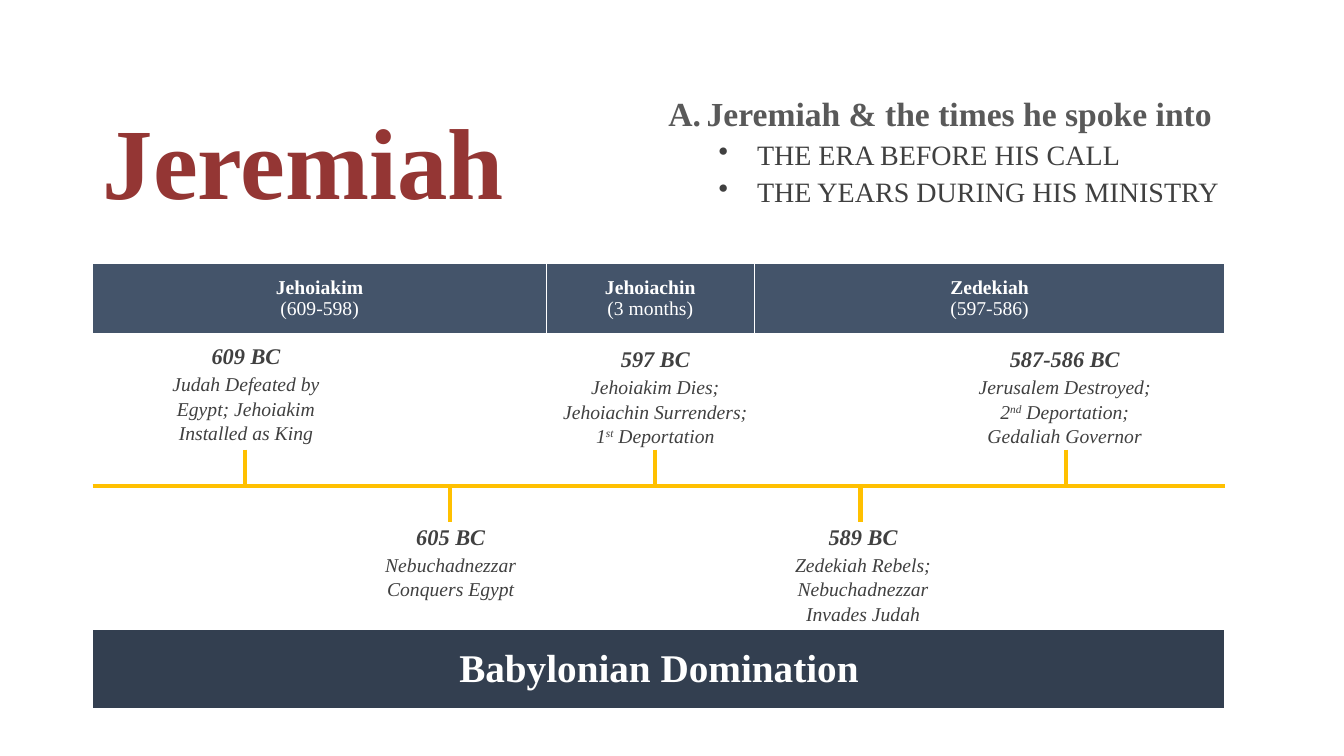
from lxml.etree import SubElement
from pptx import Presentation
from pptx.dml.color import RGBColor
from pptx.enum.shapes import MSO_CONNECTOR
from pptx.enum.text import MSO_ANCHOR, MSO_AUTO_SIZE, PP_ALIGN
from pptx.oxml.ns import qn
from pptx.util import Inches, Pt

FONT = "Times New Roman"
MAROON = RGBColor(0x94, 0x36, 0x34)
GREY = RGBColor(0x59, 0x59, 0x59)
DARK_GREY = RGBColor(0x40, 0x40, 0x40)
GOLD = RGBColor(0xFF, 0xC0, 0x00)
SLATE = RGBColor(0x44, 0x54, 0x6A)
NAVY = RGBColor(0x33, 0x3F, 0x50)
WHITE = RGBColor(0xFF, 0xFF, 0xFF)

LEFT, WIDTH = 0.92, 11.23
STEM = 0.36
LABEL_WIDTH, LABEL_HEIGHT = 2.04, 1.09

POINTS = ["THE ERA BEFORE HIS CALL", "THE YEARS DURING HIS MINISTRY"]
KINGS = [
    ("Jehoiakim", "(609-598)", 4.5),
    ("Jehoiachin", "(3 months)", 2.06),
    ("Zedekiah", "(597-586)", 4.67),
]
# Label left, label top, date, and description split as (before, superscript, after)
EVENTS = [
    (1.42, 3.38, "609 BC",
     ("Judah Defeated by Egypt; Jehoiakim Installed as King", "", "")),
    (3.45, 5.17, "605 BC", ("Nebuchadnezzar Conquers Egypt", "", "")),
    (5.48, 3.41, "597 BC",
     ("Jehoiakim Dies; Jehoiachin Surrenders; 1", "st", " Deportation")),
    (7.54, 5.17, "589 BC",
     ("Zedekiah Rebels; Nebuchadnezzar Invades Judah", "", "")),
    (9.54, 3.41, "587-586 BC",
     ("Jerusalem Destroyed; 2", "nd", " Deportation; Gedaliah Governor")),
]


def add_run(paragraph, text, size, color, bold=False, italic=False):
    run = paragraph.add_run()
    run.text = text
    font = run.font
    font.name, font.size, font.bold, font.italic = FONT, Pt(size), bold, italic
    font.color.rgb = color
    return run


def add_text_frame(slide, left, top, width, height):
    box = slide.shapes.add_textbox(
        Inches(left), Inches(top), Inches(width), Inches(height))
    box.text_frame.word_wrap = True
    return box.text_frame


def set_bullet(paragraph, tag, indent, **attributes):
    """Give the paragraph a hanging bullet or number."""
    properties = paragraph._p.get_or_add_pPr()
    properties.set("marL", str(Inches(indent)))
    properties.set("indent", str(Inches(-0.38)))
    SubElement(properties, qn(tag), attributes)


def add_title(slide, left, top, width, height):
    title = slide.shapes.title
    title.left, title.top = Inches(left), Inches(top)
    title.width, title.height = Inches(width), Inches(height)
    frame = title.text_frame
    frame.auto_size = MSO_AUTO_SIZE.NONE
    frame.vertical_anchor = MSO_ANCHOR.BOTTOM
    paragraph = frame.paragraphs[0]
    paragraph.alignment = PP_ALIGN.LEFT
    paragraph.line_spacing = 0.9
    add_run(paragraph, "Jeremiah", 72, MAROON, bold=True)


def add_outline(slide, left, top, width, height):
    frame = add_text_frame(slide, left, top, width, height)
    heading = frame.paragraphs[0]
    heading.line_spacing = 0.9
    heading.space_before = Pt(10)
    set_bullet(heading, "a:buAutoNum", 0.38, type="alphaUcPeriod")
    add_run(heading, "Jeremiah & the times he spoke into", 24, GREY, bold=True)
    for point in POINTS:
        paragraph = frame.add_paragraph()
        paragraph.level = 1
        paragraph.line_spacing = 0.9
        paragraph.space_before = Pt(5)
        set_bullet(paragraph, "a:buChar", 0.88, char="•")
        add_run(paragraph, point, 20, DARK_GREY)


def add_band(slide, top, height, widths, fill):
    """Add a one-row table and return its cells."""
    table = slide.shapes.add_table(
        1, len(widths), Inches(LEFT), Inches(top), Inches(WIDTH), Inches(height)).table
    for column, width in zip(table.columns, widths):
        column.width = Inches(width)
    cells = list(table.rows[0].cells)
    for cell in cells:
        cell.fill.solid()
        cell.fill.fore_color.rgb = fill
        cell.vertical_anchor = MSO_ANCHOR.MIDDLE
        cell.text_frame.paragraphs[0].alignment = PP_ALIGN.CENTER
    return cells


def add_kings(slide, top, height):
    cells = add_band(slide, top, height, [king[2] for king in KINGS], SLATE)
    for cell, (name, reign, _) in zip(cells, KINGS):
        add_run(cell.text_frame.paragraphs[0], name, 14, WHITE, bold=True)
        paragraph = cell.text_frame.add_paragraph()
        paragraph.alignment = PP_ALIGN.CENTER
        add_run(paragraph, reign, 14, WHITE)


def add_domination(slide, top, height):
    cell = add_band(slide, top, height, [WIDTH], NAVY)[0]
    add_run(cell.text_frame.paragraphs[0], "Babylonian Domination", 28, WHITE, bold=True)


def add_line(slide, x1, y1, x2, y2):
    line = slide.shapes.add_connector(
        MSO_CONNECTOR.STRAIGHT, Inches(x1), Inches(y1), Inches(x2), Inches(y2))
    line.line.color.rgb = GOLD
    line.line.width = Pt(3)
    SubElement(line._element.spPr, qn("a:effectLst"))


def add_event_label(slide, left, top, date, description):
    frame = add_text_frame(slide, left, top, LABEL_WIDTH, LABEL_HEIGHT)
    heading = frame.paragraphs[0]
    heading.alignment = PP_ALIGN.CENTER
    heading.line_spacing = 0.9
    heading.space_before = Pt(10)
    add_run(heading, date, 16, DARK_GREY, bold=True, italic=True)

    paragraph = frame.add_paragraph()
    paragraph.alignment = PP_ALIGN.CENTER
    paragraph.line_spacing = 1.04
    paragraph.space_before = Pt(1)
    before, superscript, after = description
    add_run(paragraph, before, 14, DARK_GREY, italic=True)
    if superscript:
        raised = add_run(paragraph, superscript, 14, DARK_GREY, italic=True)
        raised.font._element.set("baseline", "30000")
        add_run(paragraph, after, 14, DARK_GREY, italic=True)


def add_timeline(slide, axis, first, last):
    """Draw the axis at the given height, with stems alternating up and down."""
    add_line(slide, LEFT, axis, LEFT + WIDTH, axis)
    step = (last - first) / (len(EVENTS) - 1)
    for index, event in enumerate(EVENTS):
        x = first + index * step
        if index % 2:
            add_line(slide, x, axis, x, axis + STEM)
        else:
            add_line(slide, x, axis - STEM, x, axis)
        add_event_label(slide, *event)


def main():
    presentation = Presentation()
    presentation.slide_width = Inches(13.33)
    presentation.slide_height = Inches(7.5)
    slide = presentation.slides.add_slide(presentation.slide_layouts[5])
    add_title(slide, LEFT, 0.5, 4.3, 1.75)
    add_outline(slide, 6.53, 0.92, 6.11, 1.68)
    add_timeline(slide, 4.82, 2.43, 10.57)
    add_domination(slide, 6.24, 0.79)
    add_kings(slide, 2.61, 0.7)
    presentation.save("out.pptx")


if __name__ == "__main__":
    main()
